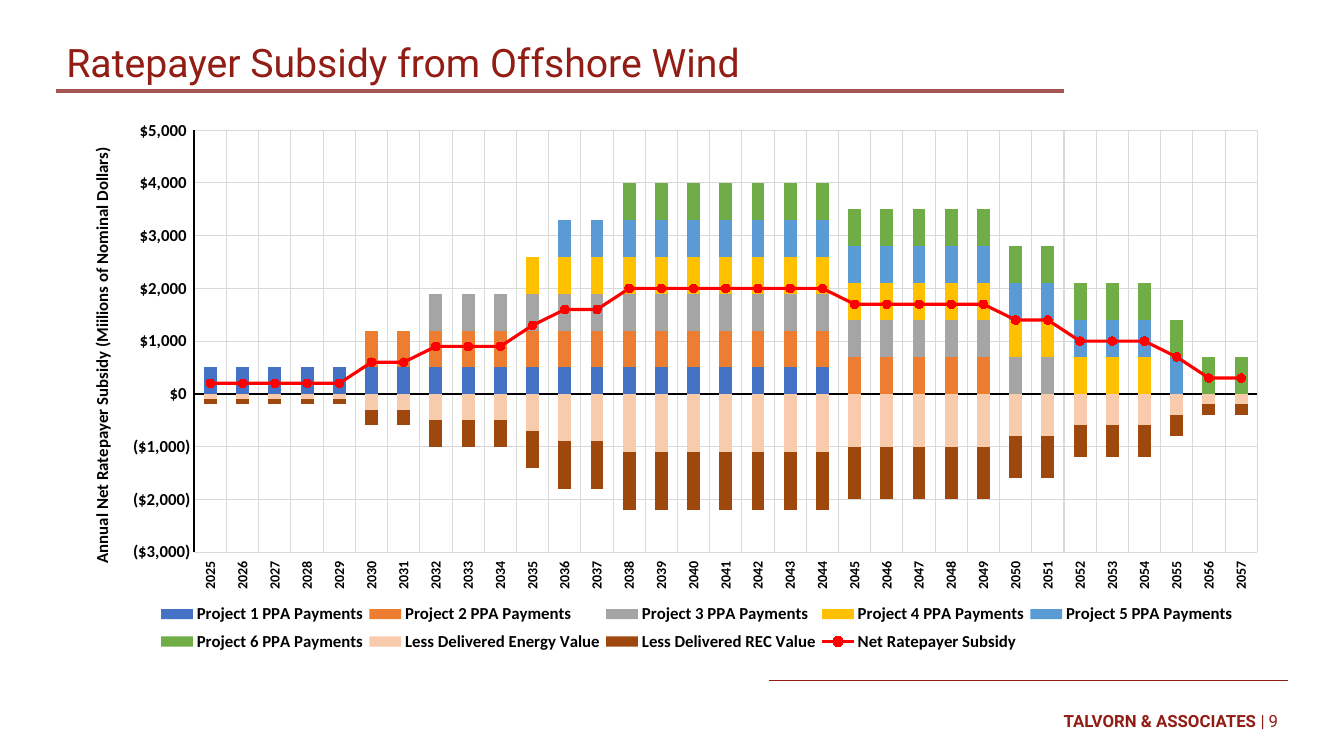
import copy

import lxml.etree
import pptx
import pptx.chart.data
import pptx.dml.color
import pptx.enum.chart
import pptx.enum.shapes
import pptx.enum.text
import pptx.oxml.ns
import pptx.util

TITLE = "Ratepayer Subsidy from Offshore Wind"
FOOTER = [("TALVORN & ASSOCIATES ", True), ("| 9", False)]
AXIS_TITLE = "Annual Net Ratepayer Subsidy (Miilions of Nominal Dollars)"
YEARS = range(2025, 2058)
CONTRACT_YEARS = 20
# name, first contract year, yearly payment, colour
PROJECTS = [
    ("Project 1 PPA Payments", 2025, 500, "4472C4"),
    ("Project 2 PPA Payments", 2030, 700, "ED7D31"),
    ("Project 3 PPA Payments", 2032, 700, "A5A5A5"),
    ("Project 4 PPA Payments", 2035, 700, "FFC000"),
    ("Project 5 PPA Payments", 2036, 700, "5B9BD5"),
    ("Project 6 PPA Payments", 2038, 700, "70AD47"),
]
# years in the phase, energy and REC value (each), net subsidy
PHASES = [
    (5, -100, 200), (2, -300, 600), (3, -500, 900), (1, -700, 1300),
    (2, -900, 1600), (7, -1100, 2000), (5, -1000, 1700), (2, -800, 1400),
    (3, -600, 1000), (1, -400, 700), (2, -200, 300),
]
DEDUCTIONS = [("Less Delivered Energy Value", "F8CBAD"),
              ("Less Delivered REC Value", "9E480E")]
NET_NAME = "Net Ratepayer Subsidy"

THEME = {
    "brand": "921D15", "title_rule": "A4554F", "ink": "000000",
    "grid": "D9D9D9", "net": "FF0000",
    "heading_font": "Roboto", "chart_font": "Calibri",
    "title_size": 28, "label_size": 12, "year_size": 10,
}
LEFT, WIDTH = 40.3, 879.8
RIGHT = LEFT + WIDTH
TITLE_BOX = (LEFT, 25.2, WIDTH, 39.6)
CHART_BOX = (LEFT, 74.9, WIDTH, 403.9)
FOOTER_BOX = (RIGHT - 242.6, 500.4, 242.6, 28.8)
# start x, end x, y, colour, weight
RULES = [(LEFT, 760.3, 64.8, THEME["title_rule"], 3),
         (549.4, RIGHT, 486, THEME["brand"], 0.5)]
LOWEST, HIGHEST, STEP = -3000, 5000, 1000
VERTICAL = "-5400000"

qn = pptx.oxml.ns.qn


def points(values):
    return [pptx.util.Pt(value) for value in values]


def rgb(code):
    return pptx.dml.color.RGBColor.from_string(code)


def set_attributes(target, values):
    for name, value in values.items():
        setattr(target, name, value)


def set_font(font, size, color, name, bold):
    set_attributes(font, {"size": pptx.util.Pt(size), "name": name, "bold": bold})
    font.color.rgb = rgb(color)


def set_line(line, color, weight):
    line.color.rgb = rgb(color)
    line.width = pptx.util.Pt(weight)


def add_text(slide, box, runs, size, frame_format, paragraph_format):
    frame = slide.shapes.add_textbox(*points(box)).text_frame
    set_attributes(frame, {"word_wrap": True, **frame_format})
    paragraph = frame.paragraphs[0]
    set_attributes(paragraph, paragraph_format)
    for text, bold in runs:
        run = paragraph.add_run()
        run.text = text
        set_font(run.font, size, THEME["brand"], THEME["heading_font"], bold)


def add_rule(slide, start, end, y, color, weight):
    rule = slide.shapes.add_connector(
        pptx.enum.shapes.MSO_CONNECTOR.STRAIGHT, *points((start, y, end, y)))
    set_line(rule.line, color, weight)
    lxml.etree.SubElement(rule._element.spPr, qn("a:effectLst"))


def add_children(parent, pairs):
    for tag, value in pairs:
        lxml.etree.SubElement(parent, qn(tag)).set("val", str(value))


def place(element, index, settings):
    """Give a chart part a manual layout, in fractions of the chart."""
    for old in element.findall(qn("c:layout")):
        element.remove(old)
    layout = lxml.etree.Element(qn("c:layout"))
    manual = lxml.etree.SubElement(layout, qn("c:manualLayout"))
    add_children(manual, [("c:" + name, value) for name, value in settings.items()])
    element.insert(index, layout)


def build_data():
    def spread(column):
        return [phase[column] for phase in PHASES for _ in range(phase[0])]

    data = pptx.chart.data.CategoryChartData(number_format="General")
    data.categories = [str(year) for year in YEARS]
    for name, first, payment, _ in PROJECTS:
        data.add_series(name, [payment if first <= year < first + CONTRACT_YEARS else 0
                               for year in YEARS])
    for name, _ in DEDUCTIONS:
        data.add_series(name, spread(1))
    data.add_series(NET_NAME, spread(2))
    return data


def move_last_series_to_line(chart):
    bars = chart.plots[0]._element
    series = chart.plots[0].series[len(PROJECTS) + len(DEDUCTIONS)]._element
    for flag in series.findall(qn("c:invertIfNegative")):
        series.remove(flag)
    line_plot = lxml.etree.SubElement(bars.getparent(), qn("c:lineChart"))
    add_children(line_plot, [("c:grouping", "standard"), ("c:varyColors", 0)])
    line_plot.append(series)
    add_children(line_plot, [("c:marker", 1)])
    for axis_id in bars.findall(qn("c:axId")):
        line_plot.append(copy.deepcopy(axis_id))
    bars.addnext(line_plot)


def style_series(chart):
    bars, line_plot = chart.plots
    set_attributes(bars, {"gap_width": 150, "overlap": 100, "vary_by_categories": False})
    colors = [item[-1] for item in PROJECTS + DEDUCTIONS]
    for series, color in zip(bars.series, colors):
        series.invert_if_negative = False
        series.format.fill.solid()
        series.format.fill.fore_color.rgb = rgb(color)
    net = line_plot.series[0]
    net.smooth = False
    set_line(net.format.line, THEME["net"], 2.25)
    set_attributes(net.marker, {"style": pptx.enum.chart.XL_MARKER_STYLE.CIRCLE, "size": 6})
    net.marker.format.fill.solid()
    net.marker.format.fill.fore_color.rgb = rgb(THEME["net"])
    set_line(net.marker.format.line, THEME["net"], 0.75)


def style_axes(chart):
    label_style = (THEME["ink"], THEME["chart_font"], True)
    years, dollars = chart.category_axis, chart.value_axis
    none = pptx.enum.chart.XL_TICK_MARK.NONE
    for axis, size in ((years, THEME["year_size"]), (dollars, THEME["label_size"])):
        set_attributes(axis, {"major_tick_mark": none, "minor_tick_mark": none,
                              "has_major_gridlines": True})
        set_line(axis.format.line, THEME["ink"], 1.5)
        set_line(axis.major_gridlines.format.line, THEME["grid"], 0.75)
        set_font(axis.tick_labels.font, size, *label_style)
    years.tick_label_position = pptx.enum.chart.XL_TICK_LABEL_POSITION.LOW
    label_body = years._element.find(qn("c:txPr")).find(qn("a:bodyPr"))
    set_attributes(dollars, {"minimum_scale": LOWEST, "maximum_scale": HIGHEST,
                             "major_unit": STEP})
    set_attributes(dollars.tick_labels, {
        "number_format": r'"$"#,##0_);\("$"#,##0\)', "number_format_is_linked": False})
    frame = dollars.axis_title.text_frame
    frame.text = AXIS_TITLE
    set_font(frame.paragraphs[0].runs[0].font, THEME["label_size"], *label_style)
    for body in (label_body, frame._txBody.find(qn("a:bodyPr"))):
        body.set("rot", VERTICAL)
        body.set("vert", "horz")
    place(dollars.axis_title._element, 1,
          {"xMode": "edge", "yMode": "edge", "x": 0.025, "y": 0.07})


def add_subsidy_chart(slide):
    chart = slide.shapes.add_chart(pptx.enum.chart.XL_CHART_TYPE.COLUMN_STACKED,
                                   *points(CHART_BOX), build_data()).chart
    set_attributes(chart, {"has_title": False, "has_legend": True})
    set_font(chart.font, THEME["year_size"], THEME["ink"], THEME["chart_font"], False)
    move_last_series_to_line(chart)
    style_series(chart)
    style_axes(chart)
    set_attributes(chart.legend, {"position": pptx.enum.chart.XL_LEGEND_POSITION.BOTTOM,
                                  "include_in_layout": False})
    set_font(chart.legend.font, THEME["label_size"], THEME["ink"], THEME["chart_font"], True)
    edges = {"xMode": "edge", "yMode": "edge"}
    place(chart.legend._element, 1, {**edges, "x": 0.08, "y": 0.87, "w": 0.88, "h": 0.11})
    place(chart.plots[0]._element.getparent(), 0,
          {"layoutTarget": "inner", **edges, "x": 0.112, "y": 0.045, "w": 0.863, "h": 0.746})


def main():
    presentation = pptx.Presentation()
    set_attributes(presentation, {"slide_width": pptx.util.Pt(960),
                                  "slide_height": pptx.util.Pt(540)})
    slide = presentation.slides.add_slide(presentation.slide_layouts[6])
    for rule in RULES:
        add_rule(slide, *rule)
    anchor = pptx.enum.text.MSO_ANCHOR
    add_text(slide, TITLE_BOX, [(TITLE, False)], THEME["title_size"],
             {"vertical_anchor": anchor.BOTTOM}, {"line_spacing": 0.9})
    add_text(slide, FOOTER_BOX, FOOTER, THEME["label_size"],
             {"vertical_anchor": anchor.MIDDLE},
             {"alignment": pptx.enum.text.PP_ALIGN.RIGHT})
    add_subsidy_chart(slide)
    presentation.save("out.pptx")


if __name__ == "__main__":
    main()
